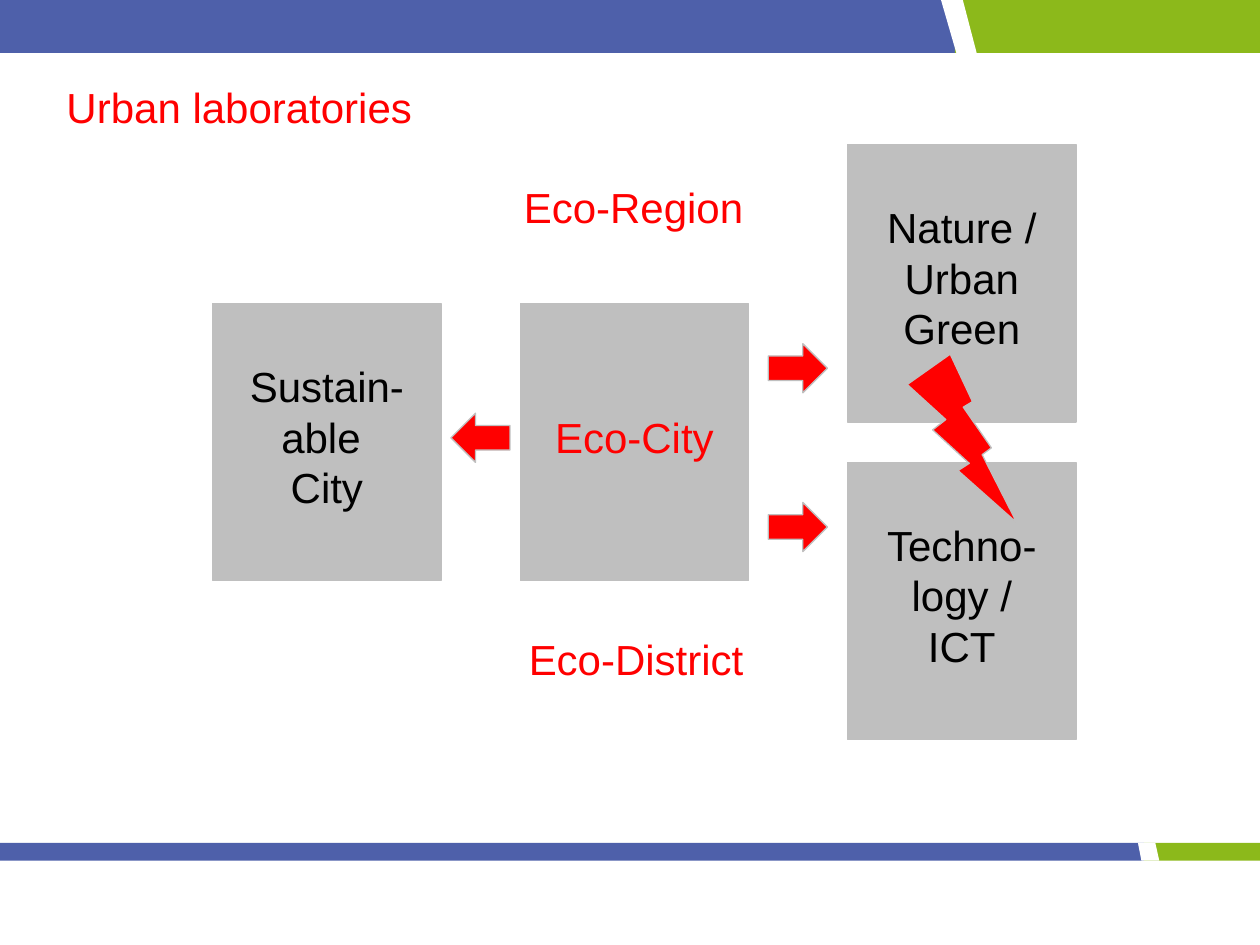
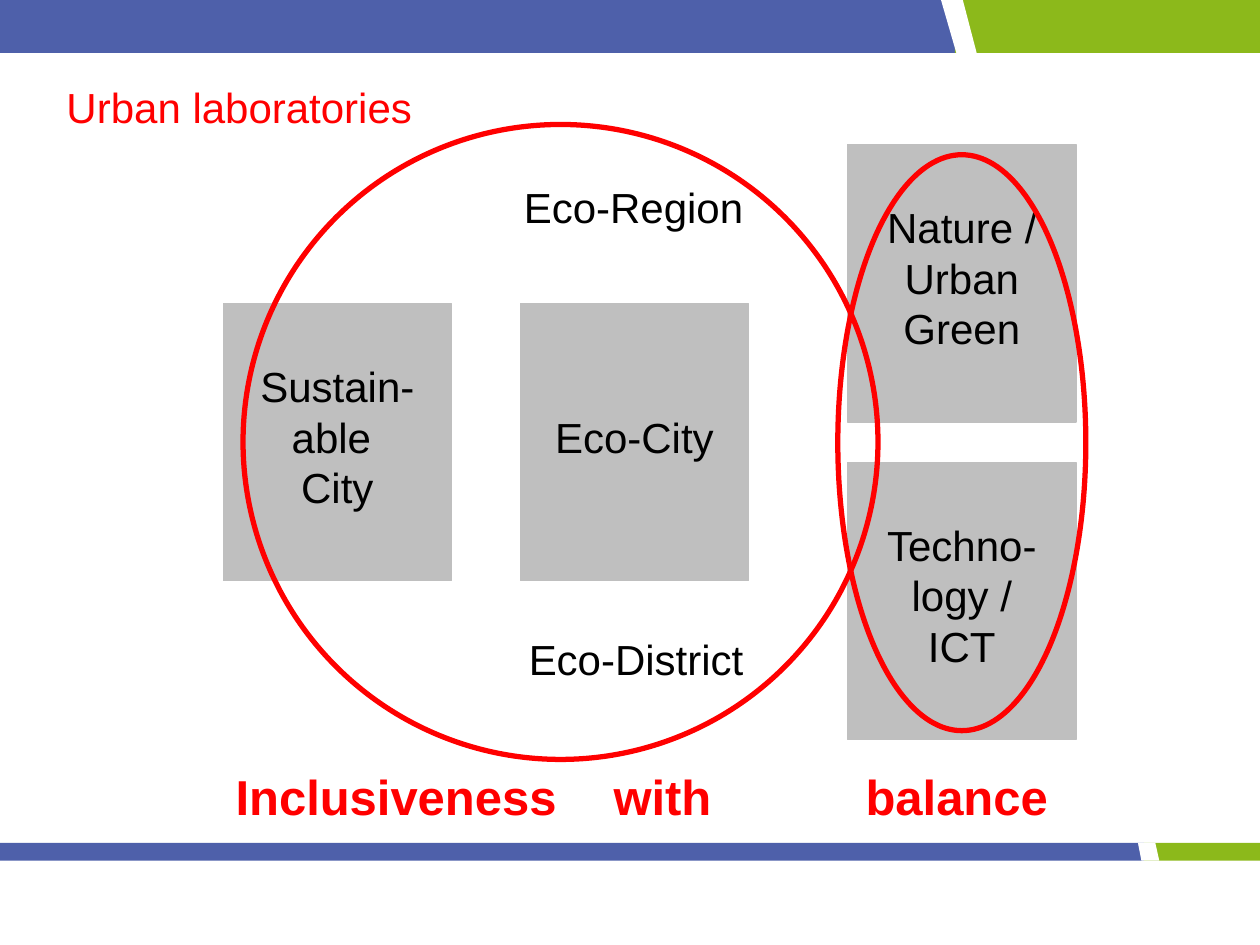
from lxml import etree
from pptx import Presentation
from pptx.dml.color import RGBColor
from pptx.enum import shapes, text
from pptx.oxml import ns
from pptx.util import Cm, Pt

BLUE = RGBColor(0x4E, 0x60, 0xAA)
GREEN = RGBColor(0x8C, 0xB9, 0x1B)
GREY = RGBColor(0xBF, 0xBF, 0xBF)
RED = RGBColor(0xFF, 0x00, 0x00)
BLACK = RGBColor(0x00, 0x00, 0x00)
WHITE = RGBColor(0xFF, 0xFF, 0xFF)

FONT = "Arial"
TITLE_ONLY = 5
BOX_WIDTH, BOX_HEIGHT = 4.6, 5.59
ARROW_WIDTH, ARROW_HEIGHT = 1.19, 0.99
MIDDLE_ROW = 6.12
RIGHT_COLUMN = 17.09
LINE_HEIGHT = 1.02

# Left edge, top, width, height and colour of each band
BANDS = [
    (0, 0, 19.25, 1.07, BLUE),
    (19.25, 0, 6.15, 1.07, GREEN),
    (0, 16.99, 23.06, 0.36, BLUE),
    (23.06, 16.99, 2.34, 0.36, GREEN),
]
# Slanted white gaps between the blue and green bands
BAND_GAPS = [
    [(18.97, 0), (19.41, 0), (19.69, 1.07), (19.28, 1.07)],
    [(22.94, 16.99), (23.29, 16.99), (23.37, 17.35), (23.01, 17.35)],
]


def write(shape, content, size=24, color=BLACK, bold=False,
          align=text.PP_ALIGN.LEFT, wrap=False, lines_above=0, tabs=()):
    """Fill a shape with one paragraph per line, lines_above lines below its top."""
    frame = shape.text_frame
    frame.text = content
    frame.word_wrap = wrap
    frame.vertical_anchor = text.MSO_ANCHOR.TOP
    frame.margin_left = frame.margin_right = Cm(0.25)
    frame.margin_top = Cm(0.13 + lines_above * LINE_HEIGHT)
    frame.margin_bottom = Cm(0.13)
    frame.auto_size = (text.MSO_AUTO_SIZE.NONE if wrap
                       else text.MSO_AUTO_SIZE.SHAPE_TO_FIT_TEXT)
    for paragraph in frame.paragraphs:
        paragraph.alignment = align
        paragraph.line_spacing = Pt(1.2 * size)
        if tabs:
            tab_list = etree.SubElement(paragraph._p.get_or_add_pPr(), ns.qn("a:tabLst"))
            for position in tabs:
                etree.SubElement(tab_list, ns.qn("a:tab"), pos=str(Cm(position)), algn="l")
        for run in paragraph.runs:
            run.font.name = FONT
            run.font.size = Pt(size)
            run.font.bold = bold
            run.font.color.rgb = color


def add_shape(slide, kind, left, top, width, height, fill=None, line=None, line_width=0.75):
    shape = slide.shapes.add_shape(kind, Cm(left), Cm(top), Cm(width), Cm(height))
    shape.shadow.inherit = False
    if fill is None:
        shape.fill.background()
    else:
        shape.fill.solid()
        shape.fill.fore_color.rgb = fill
    if line is None:
        shape.line.fill.background()
    else:
        shape.line.color.rgb = line
        shape.line.width = Pt(line_width)
    return shape


presentation = Presentation()
presentation.slide_width = Cm(25.4)
presentation.slide_height = Cm(19.05)

slides = []
# The left box and the colour of the Eco labels differ between the slides
for sustainable_left, eco_color in [(4.29, RED), (4.5, BLACK)]:
    slide = presentation.slides.add_slide(presentation.slide_layouts[TITLE_ONLY])
    slides.append(slide)

    for left, top, width, height, color in BANDS:
        add_shape(slide, shapes.MSO_SHAPE.RECTANGLE, left, top, width, height, color)
    for corners in BAND_GAPS:
        points = [(Cm(x), Cm(y)) for x, y in corners]
        builder = slide.shapes.build_freeform(*points[0])
        builder.add_line_segments(points[1:], close=True)
        gap = builder.convert_to_shape()
        gap.shadow.inherit = False
        gap.fill.solid()
        gap.fill.fore_color.rgb = WHITE
        gap.line.fill.background()

    title = slide.shapes.title
    title.left, title.top, title.width, title.height = Cm(1.09), Cm(1.52), Cm(7.57), Cm(1.27)
    write(title, "Urban laboratories", color=RED)

    for content, left, top, color, lines_above in [
        ("Eco-City", 10.49, MIDDLE_ROW, eco_color, 2),
        ("Nature /\nUrban Green", RIGHT_COLUMN, 2.92, BLACK, 1),
        ("Techno-logy /\nICT", RIGHT_COLUMN, 9.32, BLACK, 1),
        ("Sustain-able \nCity", sustainable_left, MIDDLE_ROW, BLACK, 1),
    ]:
        box = add_shape(slide, shapes.MSO_SHAPE.RECTANGLE, left, top,
                        BOX_WIDTH, BOX_HEIGHT, GREY, GREY)
        write(box, content, color=color, align=text.PP_ALIGN.CENTER,
              wrap=True, lines_above=lines_above)

    for content, left, top, width in [
        ("Eco-Region", 10.31, 3.53, 4.98),
        ("Eco-District", 10.41, 12.65, 4.88),
    ]:
        label = slide.shapes.add_textbox(Cm(left), Cm(top), Cm(width), Cm(1.27))
        write(label, content, color=eco_color)

arrow_slide, balance_slide = slides

# Slide 1: conflict between nature and technology, arrows out of the Eco-City
add_shape(arrow_slide, shapes.MSO_SHAPE.LIGHTNING_BOLT, 18.29, 7.14, 2.21, 3.4, RED, GREY)
for left, top, rotation in [(15.49, 6.93, 0), (15.49, 10.13, 0), (9.09, 8.33, 180)]:
    arrow = add_shape(arrow_slide, shapes.MSO_SHAPE.RIGHT_ARROW, left, top,
                      ARROW_WIDTH, ARROW_HEIGHT, RED, GREY)
    arrow.rotation = rotation

# Slide 2: slogan and the two rings
slogan = balance_slide.shapes.add_textbox(Cm(4.5), Cm(15.32), Cm(17.07), Cm(1.45))
write(slogan, "Inclusiveness \twith \t\tbalance", size=28, color=RED, bold=True,
      tabs=(7.62, 10.16, 12.7))
for left, top, width, height in [(4.9, 2.51, 12.8, 12.8), (16.89, 3.12, 5, 11.61)]:
    add_shape(balance_slide, shapes.MSO_SHAPE.OVAL, left, top, width, height,
              line=RED, line_width=3)

presentation.save("out.pptx")
